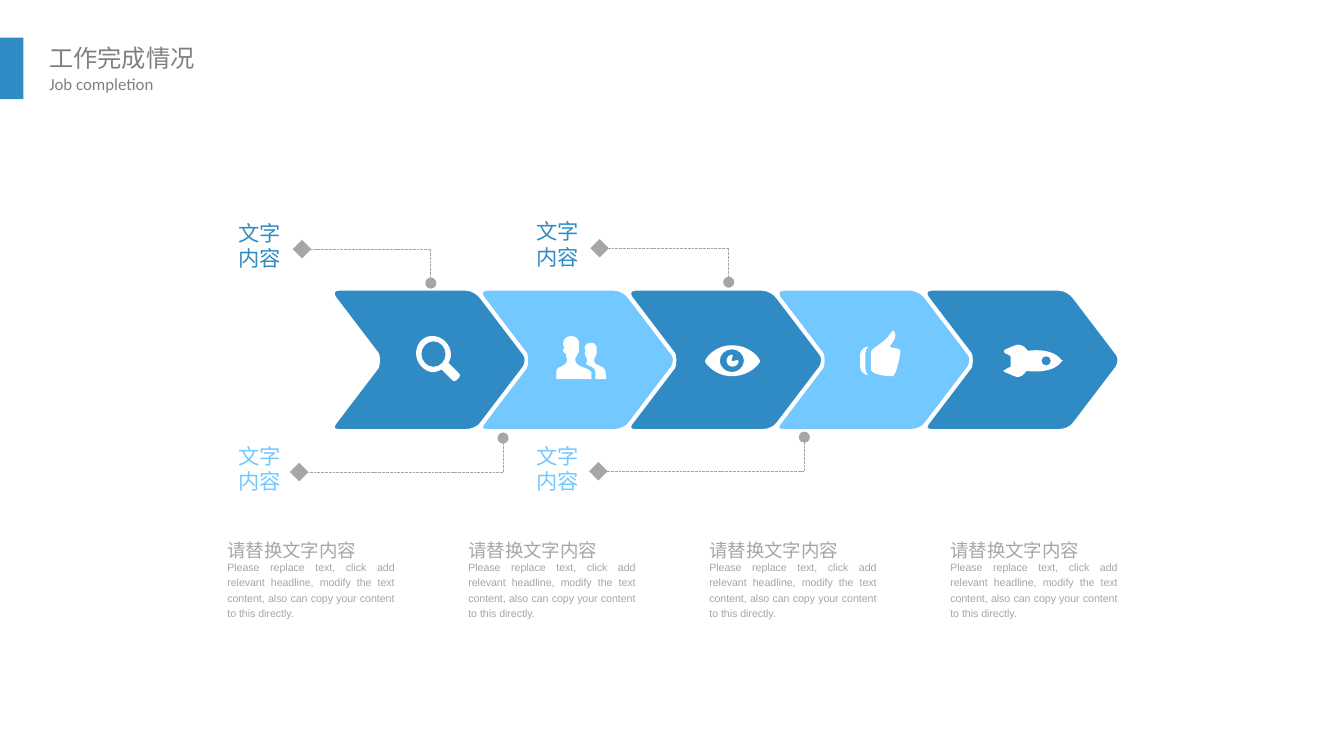
from dataclasses import dataclass

from lxml.etree import Element, SubElement
from pptx import Presentation
from pptx.dml.color import RGBColor
from pptx.enum.dml import MSO_LINE
from pptx.enum.shapes import MSO_CONNECTOR, MSO_SHAPE
from pptx.enum.text import MSO_AUTO_SIZE, PP_ALIGN
from pptx.oxml.ns import qn
from pptx.util import Pt


@dataclass(frozen=True)
class Theme:
    blue: str = "308BC4"
    sky: str = "73C8FF"
    title: str = "808080"
    gray: str = "A6A6A6"
    white: str = "FFFFFF"
    sans: str = "Arial"
    cjk: str = "Noto Sans CJK SC"
    latin: str = "Calibri"
    title_size: float = 13
    subtitle_size: float = 9
    label_size: float = 11.4
    head_size: float = 9.9
    body_size: float = 5.7


T = Theme()


def ellipse(cx, cy, rx, ry):
    """Four Bezier quarters, in the same form as the outlines below."""
    kx, ky = 0.55 * rx, 0.55 * ry
    left, top, right, bottom = cx - rx, cy - ry, cx + rx, cy + ry
    return [(left, cy),
            (left, cy - ky, cx - kx, top, cx, top), (cx + kx, top, right, cy - ky, right, cy),
            (right, cy + ky, cx + kx, bottom, cx, bottom),
            (cx - kx, bottom, left, cy + ky, left, cy)]


LABEL = "文字内容"
HEADING = "请替换文字内容"
BODY = ("Please replace text, click add relevant headline, modify the text content, "
        "also can copy your content to this directly.")
COLUMNS = [(HEADING, BODY)] * 4

# label x, label y, colour, diamond x, bar y, corner x, dot y
CALLOUTS = [
    (125.3, 117.8, T.blue, 161.8, 133.5, 230.8, 151.7),
    (125.3, 237.3, T.sky, 160.3, 252.9, 269.5, 234.7),
    (284.8, 117.1, T.blue, 321.2, 133.0, 390.4, 151.2),
    (284.8, 237.3, T.sky, 320.6, 252.5, 430.9, 234.2),
]

# Outlines sit on a grid of UNIT points. A pair is a corner; six numbers are a Bezier curve.
UNIT = 0.72
CHEVRON = [[(111, 100), (109, 103, 104, 105, 100, 105), (5, 105), (1, 105, 0, 103, 2, 100),
            (34, 58), (35, 55, 35, 50, 34, 48), (2, 6), (0, 3, 1, 0, 5, 0),
            (100, 0), (104, 0, 109, 3, 111, 6), (143, 48), (145, 50, 145, 55, 143, 58)]]
MAGNIFIER = [
    [(32, 28), (24, 20), (25, 19, 26, 16, 26, 14), (26, 7, 20, 0, 12, 0), (5, 0, 0, 6, 0, 13),
     (0, 20, 6, 27, 13, 27), (15, 27, 17, 26, 19, 25), (27, 33), (28, 34, 29, 34, 30, 33),
     (32, 31), (33, 30, 33, 29, 32, 28)],
    ellipse(13, 13.5, 9, 9.5),
]
PEOPLE = [
    [(37, 32), (37, 32, 37, 26, 36, 25), (36, 24, 34, 23, 32, 22), (29, 21, 28, 20, 28, 18),
     (28, 16, 29, 17, 29, 15), (29, 14, 30, 15, 30, 13), (30, 12, 30, 11, 30, 11),
     (30, 11, 30, 10, 30, 9), (30, 8, 29, 5, 26, 5), (22, 5, 21, 8, 21, 9),
     (21, 10, 22, 11, 22, 11), (22, 11, 21, 12, 21, 13), (21, 15, 22, 14, 22, 15),
     (23, 17, 23, 16, 23, 18), (23, 19, 23, 20, 22, 21), (28, 24, 29, 24, 29, 27), (29, 32)],
    [(19, 23), (15, 21, 14, 20, 14, 17), (14, 16, 15, 16, 16, 13), (16, 12, 17, 13, 17, 10),
     (17, 9), (17, 9, 17, 7, 17, 6), (17, 4, 16, 0, 11, 0), (6, 0, 5, 4, 5, 6),
     (5, 7, 6, 9, 6, 9), (6, 9, 5, 9, 5, 10), (5, 13, 6, 12, 7, 13), (7, 16, 8, 16, 8, 17),
     (8, 20, 7, 21, 3, 23), (2, 23, 0, 24, 0, 26), (0, 32), (26, 32),
     (26, 32, 26, 29, 26, 27), (26, 26, 23, 24, 19, 23)],
]
EYE = [
    [(20, 0), (7, 0, 0, 10, 0, 12), (0, 13, 7, 23, 20, 23), (34, 23, 41, 13, 41, 12),
     (41, 10, 34, 0, 20, 0)],
    ellipse(20, 11.5, 9, 8.5),
    [(20, 12), (19, 11, 22, 7, 20, 7), (18, 7, 16, 9, 16, 12), (16, 14, 18, 16, 20, 16),
     (23, 16, 25, 14, 25, 12), (25, 10, 21, 12, 20, 12)],
]
THUMB = [
    [(22, 13), (22, 12, 29, 6, 25, 1), (24, 0, 21, 7, 16, 10), (14, 12, 8, 15, 8, 17), (8, 30),
     (8, 33, 17, 35, 24, 35), (27, 35, 30, 19, 30, 16), (30, 14, 22, 14, 22, 13)],
    [(6, 13), (5, 13, 0, 14, 0, 19), (0, 28), (0, 33, 5, 34, 6, 34), (7, 34, 4, 33, 4, 30),
     (4, 18), (4, 14, 7, 13, 6, 13)],
]
ROCKET = [
    [(18, 27), (18, 27, 37, 30, 44, 20), (45, 20, 45, 20, 45, 19), (45, 19, 45, 19, 44, 19),
     (37, 9, 19, 12, 19, 12), (13, 5, 12, 7, 2, 11), (0, 12, 1, 13, 2, 14),
     (3, 14, 6, 16, 6, 16), (6, 24), (6, 24, 3, 25, 2, 26), (0, 26, 0, 28, 2, 28),
     (12, 32, 12, 34, 18, 27)],
    ellipse(32.5, 19.5, 3.5, 3.5),
]
# outline, left, top
ICONS = [(THUMB, 460.8, 176.4), (PEOPLE, 298.1, 180), (MAGNIFIER, 222.9, 180),
         (ROCKET, 537.1, 179.3), (EYE, 377.7, 185)]


def rgb(color):
    return RGBColor.from_string(color)


def paint(sp, fill, line=None):
    sp.shadow.inherit = False
    sp.fill.solid()
    sp.fill.fore_color.rgb = rgb(fill)
    if line:
        sp.line.color.rgb = rgb(line)
        sp.line.width = Pt(1.5)
    else:
        sp.line.fill.background()


def add_outline(slide, contours, left, top, fill, line=None):
    """Build the outline from its corners, then bend the curved segments."""
    def place(x, y):
        return Pt(left + UNIT * x), Pt(top + UNIT * y)

    builder = None
    for start, *segs in contours:
        if builder is None:
            builder = slide.shapes.build_freeform(*place(*start))
        else:
            builder.move_to(*place(*start))
        builder.add_line_segments([place(*seg[-2:]) for seg in segs], close=True)
    sp = builder.convert_to_shape()
    segs = [seg for contour in contours for seg in contour[1:]]
    for node, seg in zip(list(sp._element.iter(qn("a:lnTo"))), segs):
        if len(seg) == 6:
            node.tag = qn("a:cubicBezTo")
            for i in (0, 1):
                x, y = place(*seg[2 * i:2 * i + 2])
                node.insert(i, Element(qn("a:pt"), x=str(x - sp.left), y=str(y - sp.top)))
    paint(sp, fill, line)


def add_text(slide, text, box, size, color, face=T.sans, align=None, spacing=None,
             wrap=True, inset=(0, 0)):
    tf = slide.shapes.add_textbox(*(Pt(v) for v in box)).text_frame
    tf.word_wrap = wrap
    tf.auto_size = MSO_AUTO_SIZE.SHAPE_TO_FIT_TEXT
    tf.margin_left = tf.margin_right = Pt(inset[0])
    tf.margin_top = tf.margin_bottom = Pt(inset[1])
    p = tf.paragraphs[0]
    p.alignment = align
    p.line_spacing = spacing
    r = p.add_run()
    r.text = text
    r.font.size = Pt(size)
    r.font.color.rgb = rgb(color)
    r.font.name = face
    SubElement(r.font._element, qn("a:ea")).set("typeface", face)


def add_leader(slide, start, end, cap, size):
    """Draw a dashed line whose far end carries the given cap."""
    cx = slide.shapes.add_connector(MSO_CONNECTOR.STRAIGHT, *(Pt(v) for v in start + end))
    cx.line.color.rgb = rgb(T.gray)
    cx.line.width = Pt(0.5)
    cx.line.dash_style = MSO_LINE.SQUARE_DOT
    SubElement(cx.line._get_or_add_ln(), qn("a:tailEnd"), type=cap, w=size, len=size)
    SubElement(cx._element.spPr, qn("a:effectLst"))


def main():
    prs = Presentation()
    prs.slide_width, prs.slide_height = Pt(720), Pt(405)
    slide = prs.slides.add_slide(prs.slide_layouts[6])

    title = dict(color=T.title, wrap=False, inset=(5.4, 2.7))
    add_text(slide, "工作完成情况", (21, 20.2, 90, 20.9), T.title_size, face=T.cjk, **title)
    add_text(slide, "Job completion", (21, 36.9, 67.7, 16.6), T.subtitle_size,
             face=T.latin, **title)
    bar = slide.shapes.add_shape(MSO_SHAPE.RECTANGLE, 0, Pt(20.2), Pt(12.6), Pt(33))
    paint(bar, T.blue)

    for i in range(len(ICONS)):
        add_outline(slide, CHEVRON, 177.8 + 79.4 * i, 155, (T.blue, T.sky)[i % 2], T.white)
    for outline, left, top in ICONS:
        add_outline(slide, outline, left, top, T.white)

    for x, y, color, diamond_x, bar_y, corner_x, dot_y in CALLOUTS:
        add_leader(slide, (corner_x, bar_y), (corner_x, dot_y), "oval", "med")
        add_leader(slide, (corner_x, bar_y), (diamond_x, bar_y), "diamond", "lg")
        add_text(slide, LABEL, (x, y, 28, 27.4), T.label_size, color, align=PP_ALIGN.CENTER)

    for i, (heading, body) in enumerate(COLUMNS):
        x = 121.8 + 129.1 * i
        style = dict(color=T.gray, align=PP_ALIGN.JUSTIFY, spacing=1.2)
        add_text(slide, heading, (x, 286.6, 72.7, 14.4), T.head_size, **style)
        add_text(slide, body, (x, 299.1, 89.6, 33.1), T.body_size, **style)

    prs.save("out.pptx")


if __name__ == "__main__":
    main()
